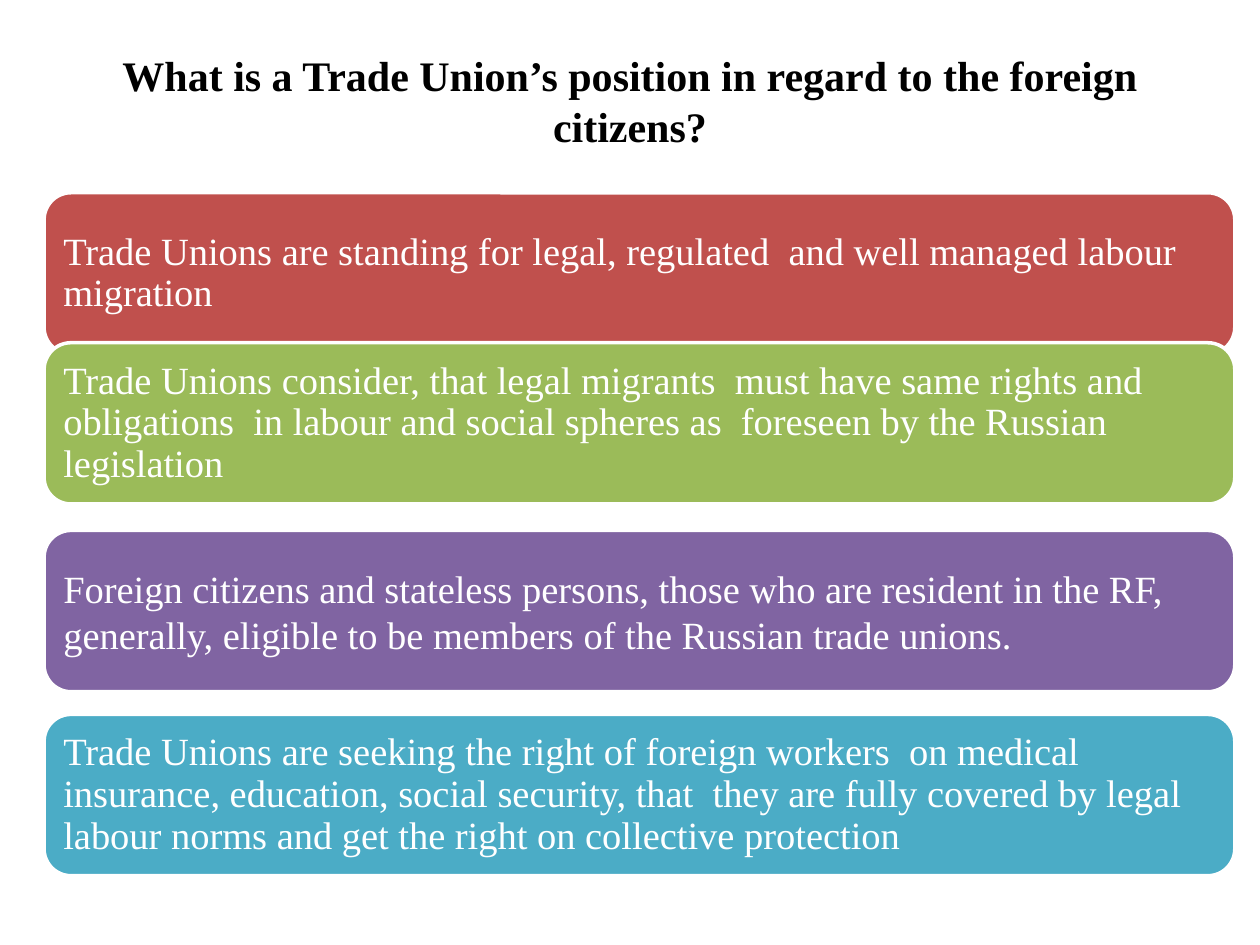
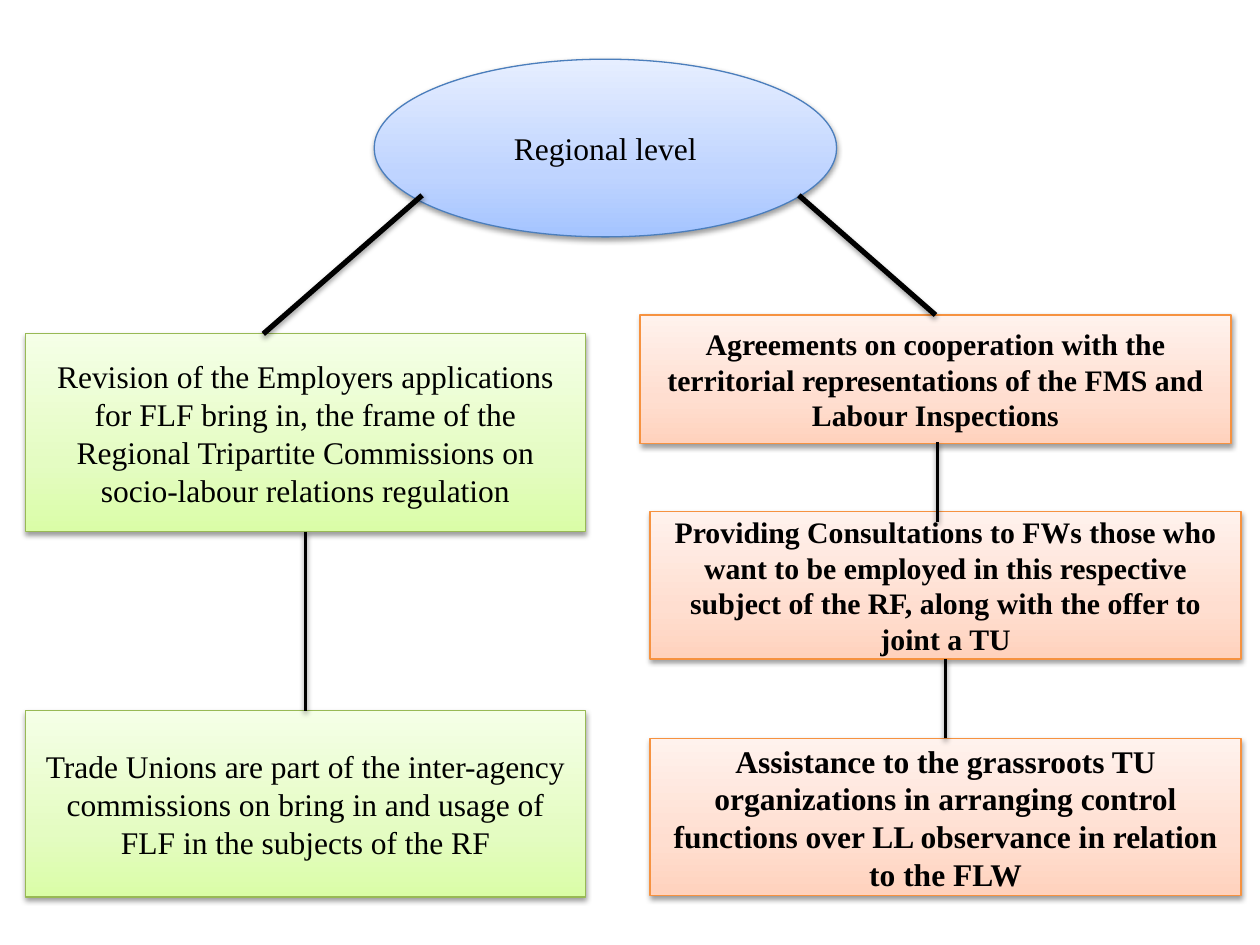
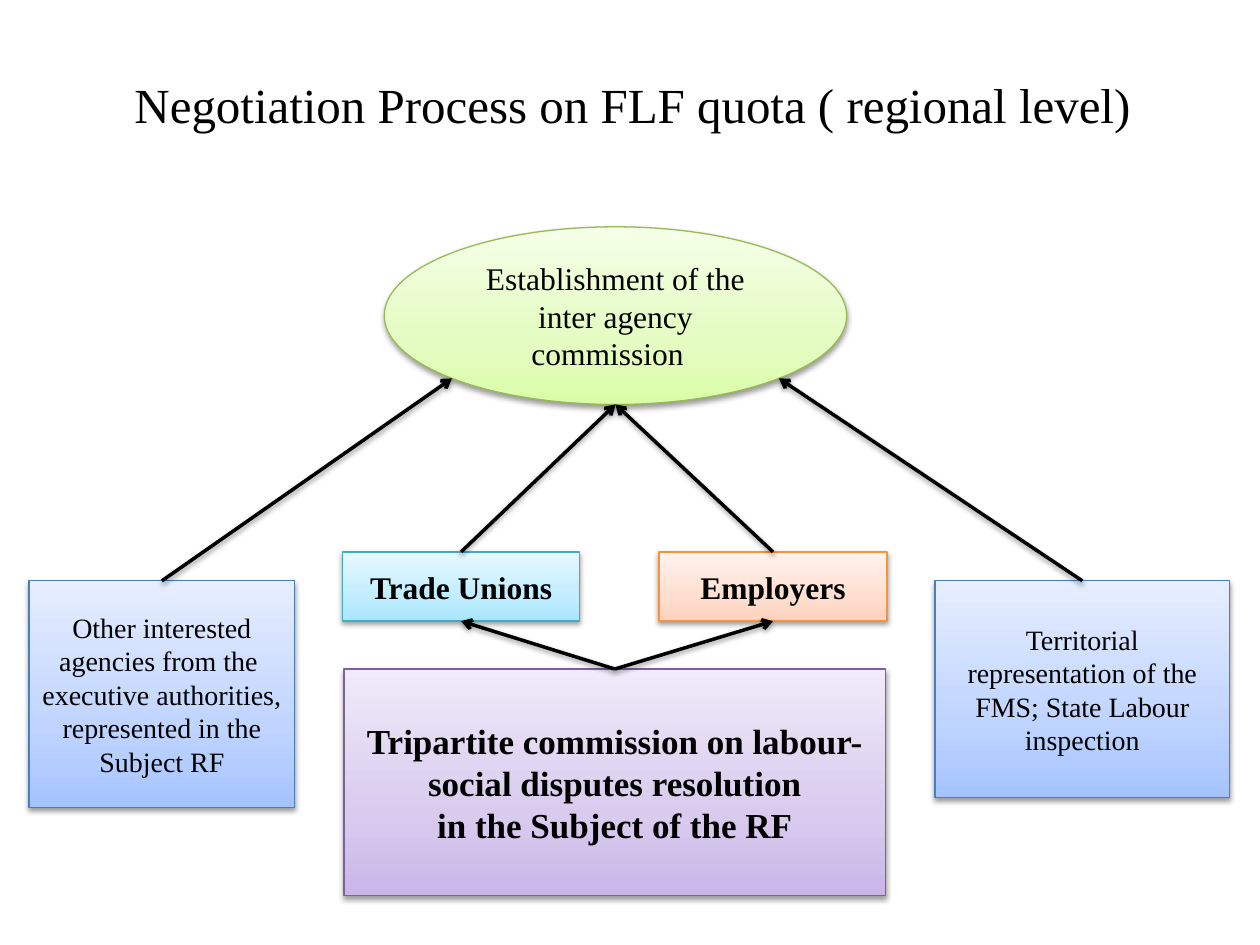
from math import sqrt

from lxml.etree import SubElement
from pptx import Presentation
from pptx.dml.color import RGBColor
from pptx.enum.shapes import MSO_CONNECTOR, MSO_SHAPE as SHAPE
from pptx.enum.text import MSO_ANCHOR, PP_ALIGN as ALIGN
from pptx.oxml.ns import qn
from pptx.util import Inches, Pt

FONT = "Times New Roman"
BLACK = RGBColor(0x00, 0x00, 0x00)
WHITE = RGBColor(0xFF, 0xFF, 0xFF)
BAND_RED = RGBColor(0xC0, 0x50, 0x4D)
BAND_GREEN = RGBColor(0x9B, 0xBB, 0x59)
BAND_PURPLE = RGBColor(0x80, 0x64, 0xA2)
BAND_TEAL = RGBColor(0x4B, 0xAC, 0xC6)


def palette(line, *stops):
    return RGBColor.from_string(line), [RGBColor.from_string(s) for s in stops]


# Line colour, then gradient colours from bottom to top
BLUE = palette("4B7EBC", "A4C4FF", "BFD4FF", "E6EEFF")
GREEN = palette("98B955", "DAFDA7", "E4FCC2", "F5FFE7")
ORANGE = palette("F69240", "FFD2BD", "FFDED0", "FFF2ED")
PURPLE = palette("7D60A0", "C9B5E8", "D8CBEE", "F0EAF9")
TEAL = palette("46AAC5", "A7E6FF", "C1EDFF", "E7F8FF")
GRADIENT_STOPS = (0, 35, 100)


def write(sp, text, size=18, color=BLACK, bold=False, align=ALIGN.CENTER,
          spacing=None, insets=(0.1, 0.05, 0.1, 0.05)):
    tf = sp.text_frame
    tf.word_wrap = True
    tf.vertical_anchor = MSO_ANCHOR.MIDDLE
    tf.margin_left, tf.margin_top, tf.margin_right, tf.margin_bottom = map(Inches, insets)
    for i, line in enumerate(text.split("\n")):
        p = tf.add_paragraph() if i else tf.paragraphs[0]
        p.alignment = align
        if spacing:
            p.line_spacing = spacing
        r = p.add_run()
        r.text = line
        r.font.name, r.font.size, r.font.bold = FONT, Pt(size), bold
        r.font.color.rgb = color


def add_title(slide, box, text, **fmt):
    write(slide.shapes.add_textbox(*map(Inches, box)), text, **fmt)


def add_shadow(effects):
    shadow = SubElement(effects, qn("a:outerShdw"), blurRad=str(Pt(3.1)), dist=str(Pt(1.6)),
                        dir="5400000", rotWithShape="0")
    color = SubElement(shadow, qn("a:srgbClr"), val=str(BLACK))
    SubElement(color, qn("a:alpha"), val="38000")


def add_node(slide, kind, origin, place, colors, text, **fmt):
    """Gradient shape with a soft shadow, placed relative to the origin."""
    left, top, width, height = place
    sp = slide.shapes.add_shape(kind, Inches(origin[0] + left), Inches(origin[1] + top),
                                Inches(width), Inches(height))
    line, stops = colors
    sp.fill.gradient()
    sp.fill.gradient_angle = 90
    sp.line.color.rgb = line
    sp.line.width = Pt(0.75)
    sp.shadow.inherit = False
    props = sp.element.spPr
    stop_list = props.find(qn("a:gradFill")).find(qn("a:gsLst"))
    for old in list(stop_list):
        stop_list.remove(old)
    for pos, color in zip(GRADIENT_STOPS, stops):
        stop = SubElement(stop_list, qn("a:gs"), pos=str(pos * 1000))
        SubElement(stop, qn("a:srgbClr"), val=str(color))
    add_shadow(props.find(qn("a:effectLst")))
    write(sp, text, **fmt)
    return sp


def link(slide, origin, begin, end, width=2, arrow=False):
    """Join two ends, each a point (x, y) or a pair (shape, side)."""
    def place(point):
        if isinstance(point[0], (int, float)):
            return Inches(origin[0] + point[0]), Inches(origin[1] + point[1])
        return point[0].left, point[0].top

    c = slide.shapes.add_connector(MSO_CONNECTOR.STRAIGHT, *place(begin), *place(end))
    if not isinstance(begin[0], (int, float)):
        c.begin_connect(*begin)
    if not isinstance(end[0], (int, float)):
        c.end_connect(*end)
    c.line.color.rgb = BLACK
    c.line.width = Pt(width)
    props = c.element.spPr
    if arrow:
        SubElement(props.find(qn("a:ln")), qn("a:tailEnd"), type="arrow")
    add_shadow(SubElement(props, qn("a:effectLst")))


def position_bands(slide, box):
    left, top, width, height = box
    bands = [
        (0, BAND_RED, 0.9, "Trade Unions are standing for legal, regulated  and well managed "
         "labour migration"),
        (1.19, BAND_GREEN, 0.9, "Trade Unions consider, that legal migrants  must have same rights "
         "and obligations  in labour and social spheres as  foreseen by the Russian legislation"),
        (2.68, BAND_PURPLE, None, "Foreign citizens and stateless persons, those who are resident "
         "in the RF, generally, eligible to be members of the Russian trade unions."),
        (4.14, BAND_TEAL, 0.9, "Trade Unions are seeking the right of foreign workers  on medical "
         "insurance, education, social security, that  they are fully covered by legal labour "
         "norms and get the right on collective protection"),
    ]
    for offset, color, spacing, text in bands:
        sp = slide.shapes.add_shape(SHAPE.ROUNDED_RECTANGLE, Inches(left), Inches(top + offset),
                                    Inches(width), Inches(height))
        sp.shadow.inherit = False
        sp.fill.solid()
        sp.fill.fore_color.rgb = color
        sp.line.color.rgb = WHITE
        sp.line.width = Pt(2)
        write(sp, text, size=22, color=WHITE, align=ALIGN.LEFT, spacing=spacing,
              insets=(0.09,) * 4)


def regional_tree(slide, origin):
    def node(place, colors, text, kind=SHAPE.RECTANGLE, **fmt):
        return add_node(slide, kind, origin, place, colors, text, **fmt)

    node((2.77, 0, 3.67, 1.41), BLUE, "Regional level", kind=SHAPE.OVAL)
    consultations = node(
        (4.96, 3.59, 4.69, 1.17), ORANGE, "Providing Consultations to FWs those who want to be "
        "employed in this respective subject of the RF, along with the offer to joint a TU",
        size=17, bold=True)
    revision = node(
        (0, 2.18, 4.45, 1.57), GREEN, "Revision of the Employers applications for FLF bring in, "
        "the frame of the Regional Tripartite Commissions on socio-labour relations regulation")
    commissions = node(
        (0, 5.17, 4.45, 1.48), GREEN, "Trade Unions are part of the inter-agency commissions on "
        "bring in and usage of FLF in the subjects of the RF")
    assistance = node(
        (4.96, 5.39, 4.69, 1.25), ORANGE, "Assistance to the grassroots TU organizations in "
        "arranging control functions over LL observance in relation to the FLW", bold=True)
    agreements = node(
        (4.88, 2.03, 4.69, 1.02), ORANGE, "Agreements on cooperation with the territorial "
        "representations of the FMS and Labour Inspections", size=17, bold=True)

    # Branches from the top level, then links down each column
    link(slide, origin, (3.15, 1.08), (1.89, 2.18), width=3)
    link(slide, origin, (6.14, 1.08), (agreements, 0), width=3)
    link(slide, origin, (revision, 2), (commissions, 0))
    link(slide, origin, (consultations, 2), (assistance, 0))
    link(slide, origin, (7.24, 3.04), (7.24, 3.67))


def negotiation_tree(slide, origin):
    def node(place, colors, text, kind=SHAPE.RECTANGLE, **fmt):
        return add_node(slide, kind, origin, place, colors, text, **fmt)

    left, top, width, height = oval = (2.82, 0, 3.67, 1.41)
    node(oval, GREEN, "Establishment of the inter agency commission  ", kind=SHAPE.OVAL)
    agencies = node((0, 2.81, 2.11, 1.8), BLUE, "Other interested agencies from the  executive "
                    "authorities, represented in the Subject RF", size=16)
    tripartite = node((2.5, 3.51, 4.3, 1.8), PURPLE, "Tripartite commission on labour- social "
                      "disputes resolution\nin the Subject of the RF", size=20, bold=True)
    territorial = node((7.19, 2.81, 2.34, 1.72), BLUE, "Territorial representation of the FMS; "
                       "State Labour inspection", size=16)
    unions = node((2.49, 2.58, 1.88, 0.55), TEAL, "Trade Unions", bold=True)
    employers = node((5, 2.58, 1.81, 0.55), ORANGE, "Employers", bold=True)

    # Points on the lower half of the oval
    mid_x, mid_y = left + width / 2, top + height / 2
    dx, dy = width / 2 / sqrt(2), height / 2 / sqrt(2)
    bottom = (mid_x, top + height)
    for begin, end in [
        ((agencies, 0), (mid_x - dx, mid_y + dy)),
        ((territorial, 0), (mid_x + dx, mid_y + dy)),
        ((tripartite, 0), (unions, 2)),
        ((tripartite, 0), (employers, 2)),
        ((unions, 0), bottom),
        ((employers, 0), bottom),
    ]:
        link(slide, origin, begin, end, arrow=True)


def main():
    prs = Presentation()
    prs.slide_width, prs.slide_height = Inches(10), Inches(7.5)
    position, regional, negotiation = [prs.slides.add_slide(prs.slide_layouts[6])
                                       for _ in range(3)]

    add_title(position, (0.5, 0.3, 9, 1.25),
              "What is a Trade Union’s position in regard to the foreign citizens?",
              size=24, bold=True, insets=(0.1, 0.05, 0.1, 0.31))
    position_bands(position, (0.35, 1.53, 9.45, 1.28))

    regional_tree(regional, (0.2, 0.47))

    add_title(negotiation, (0.27, 0.28, 9.5, 1.09),
              "Negotiation Process on FLF quota ( regional level)", size=28)
    negotiation_tree(negotiation, (0.23, 1.8))

    prs.save("out.pptx")


if __name__ == "__main__":
    main()
